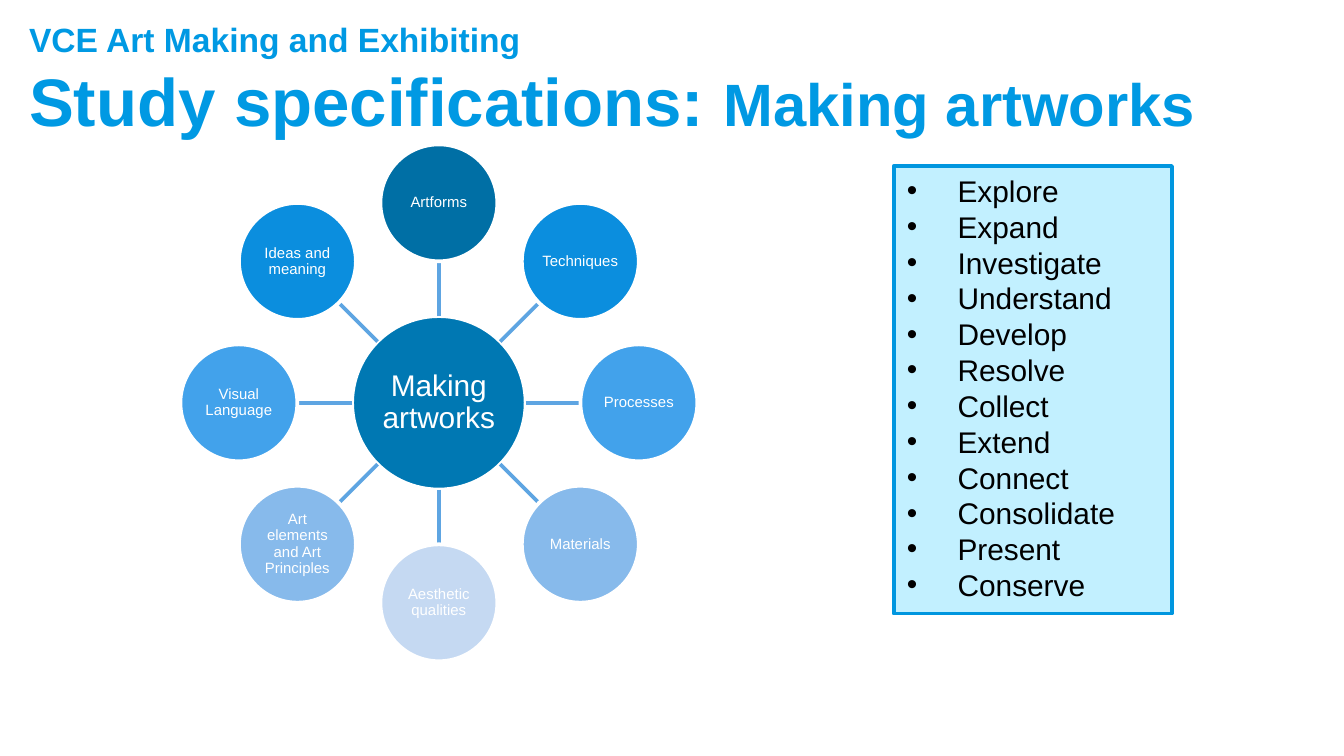
from dataclasses import dataclass
from math import cos, radians, sin

from lxml.etree import SubElement
from pptx import Presentation
from pptx.dml.color import RGBColor
from pptx.enum.shapes import MSO_CONNECTOR as Connector, MSO_SHAPE as Shape
from pptx.enum.text import MSO_ANCHOR as Anchor, PP_ALIGN as Align
from pptx.oxml.ns import qn
from pptx.util import Cm, Pt


@dataclass(frozen=True)
class Theme:
    """Colours, type sizes and line width of the slide."""
    font: str = "Arial"
    heading: str = "0099E3"
    hub: str = "0078B3"
    spoke: str = "5EA5E2"
    panel: str = "C2F0FF"
    panel_line: str = "0096DF"
    white: str = "FFFFFF"
    black: str = "000000"
    kicker_size: int = 18
    title_size: int = 36
    subtitle_size: int = 32
    body_size: int = 16
    node_size: int = 8
    line_width: int = 2


THEME = Theme()
NODES = [
    ("Artforms", "006FA5"),
    ("Techniques", "0B8EDE"),
    ("Processes", "42A2EB"),
    ("Materials", "87BAEB"),
    ("Aesthetic qualities", "C5D9F2"),
    ("Art elements and Art Principles", "87BAEB"),
    ("Visual Language", "42A2EB"),
    ("Ideas and meaning", "0B8EDE"),
]
ACTIONS = ["Explore", "Expand", "Investigate", "Understand", "Develop", "Resolve",
           "Collect", "Extend", "Connect", "Consolidate", "Present", "Conserve"]


def add_text(paragraph, text, *, size, color, bold=False, align=Align.LEFT, spacing=1.0):
    """Append a formatted run to a paragraph."""
    paragraph.alignment = align
    paragraph.line_spacing = spacing
    run = paragraph.add_run()
    run.text = text
    run.font.name = THEME.font
    run.font.size = Pt(size)
    run.font.bold = bold
    run.font.color.rgb = RGBColor.from_string(color)


def add_bullet(paragraph, indent):
    """Give a paragraph a hanging round bullet."""
    properties = paragraph._p.get_or_add_pPr()
    properties.set("marL", str(indent))
    properties.set("indent", str(-indent))
    SubElement(properties, qn("a:buFont")).set("typeface", THEME.font)
    SubElement(properties, qn("a:buChar")).set("char", "•")


def add_filled_shape(slide, kind, box, fill, line):
    """Draw a flat preset shape whose text wraps."""
    shape = slide.shapes.add_shape(kind, *box)
    shape.shadow.inherit = False
    shape.fill.solid()
    shape.fill.fore_color.rgb = RGBColor.from_string(fill)
    shape.line.color.rgb = RGBColor.from_string(line)
    shape.line.width = Pt(THEME.line_width)
    shape.text_frame.word_wrap = True
    return shape


def add_circle(slide, x, y, diameter, text, fill, size):
    """Draw a labelled circle around a centre point."""
    box = (int(x - diameter / 2), int(y - diameter / 2), diameter, diameter)
    frame = add_filled_shape(slide, Shape.OVAL, box, fill, THEME.white).text_frame
    frame.vertical_anchor = Anchor.MIDDLE
    frame.margin_left = frame.margin_right = Cm(0.03)
    frame.margin_top = frame.margin_bottom = Cm(0.03)
    add_text(frame.paragraphs[0], text, size=size, color=THEME.white,
             align=Align.CENTER, spacing=0.9)


def add_spoke(slide, start, end):
    """Draw a plain line between two points."""
    connector = slide.shapes.add_connector(Connector.STRAIGHT, *start, *end)
    connector.line.color.rgb = RGBColor.from_string(THEME.spoke)
    connector.line.width = Pt(THEME.line_width)
    SubElement(connector._element.spPr, qn("a:effectLst"))


def build_title(slide, box):
    """Place the two-line heading in its box."""
    frame = slide.shapes.add_textbox(*box).text_frame
    frame.word_wrap = True
    frame.vertical_anchor = Anchor.MIDDLE
    paragraph = frame.paragraphs[0]
    style = {"color": THEME.heading, "bold": True}
    add_text(paragraph, "VCE Art Making and Exhibiting", size=THEME.kicker_size, **style)
    paragraph.add_line_break()
    add_text(paragraph, "Study specifications: ", size=THEME.title_size, **style)
    add_text(paragraph, "Making artworks", size=THEME.subtitle_size, **style)


def build_wheel(slide, box):
    """Place the hub and its ring of topics in a square box."""
    left, top, side, _ = box
    hub, node = Cm(3.28), Cm(2.21)
    ring = (side - node) / 2

    def point(angle, radius):
        return (int(left + side / 2 + radius * cos(angle)),
                int(top + side / 2 + radius * sin(angle)))

    add_circle(slide, *point(0, 0), hub, "Making artworks", THEME.hub, THEME.body_size)
    for index, (text, fill) in enumerate(NODES):
        angle = radians(index * 360 / len(NODES) - 90)
        add_spoke(slide, point(angle, hub / 2), point(angle, ring - node / 2))
        add_circle(slide, *point(angle, ring), node, text, fill, THEME.node_size)


def build_actions(slide, box):
    """Place the bulleted panel of actions."""
    panel = add_filled_shape(slide, Shape.RECTANGLE, box, THEME.panel, THEME.panel_line)
    frame = panel.text_frame
    frame.vertical_anchor = Anchor.TOP
    for index, action in enumerate(ACTIONS):
        paragraph = frame.add_paragraph() if index else frame.paragraphs[0]
        add_bullet(paragraph, Cm(0.96))
        add_text(paragraph, action, size=THEME.body_size, color=THEME.black)


def main():
    """Build and save the slide."""
    presentation = Presentation()
    presentation.slide_width, presentation.slide_height = Cm(25.4), Cm(14.29)
    slide = presentation.slides.add_slide(presentation.slide_layouts[6])
    build_title(slide, (Cm(0.3), Cm(0.3), Cm(24.2), Cm(2.39)))
    build_wheel(slide, (Cm(3.41), Cm(2.73), Cm(9.77), Cm(9.77)))
    build_actions(slide, (Cm(16.89), Cm(3.14), Cm(5.26), Cm(8.46)))
    presentation.save("out.pptx")


if __name__ == "__main__":
    main()
